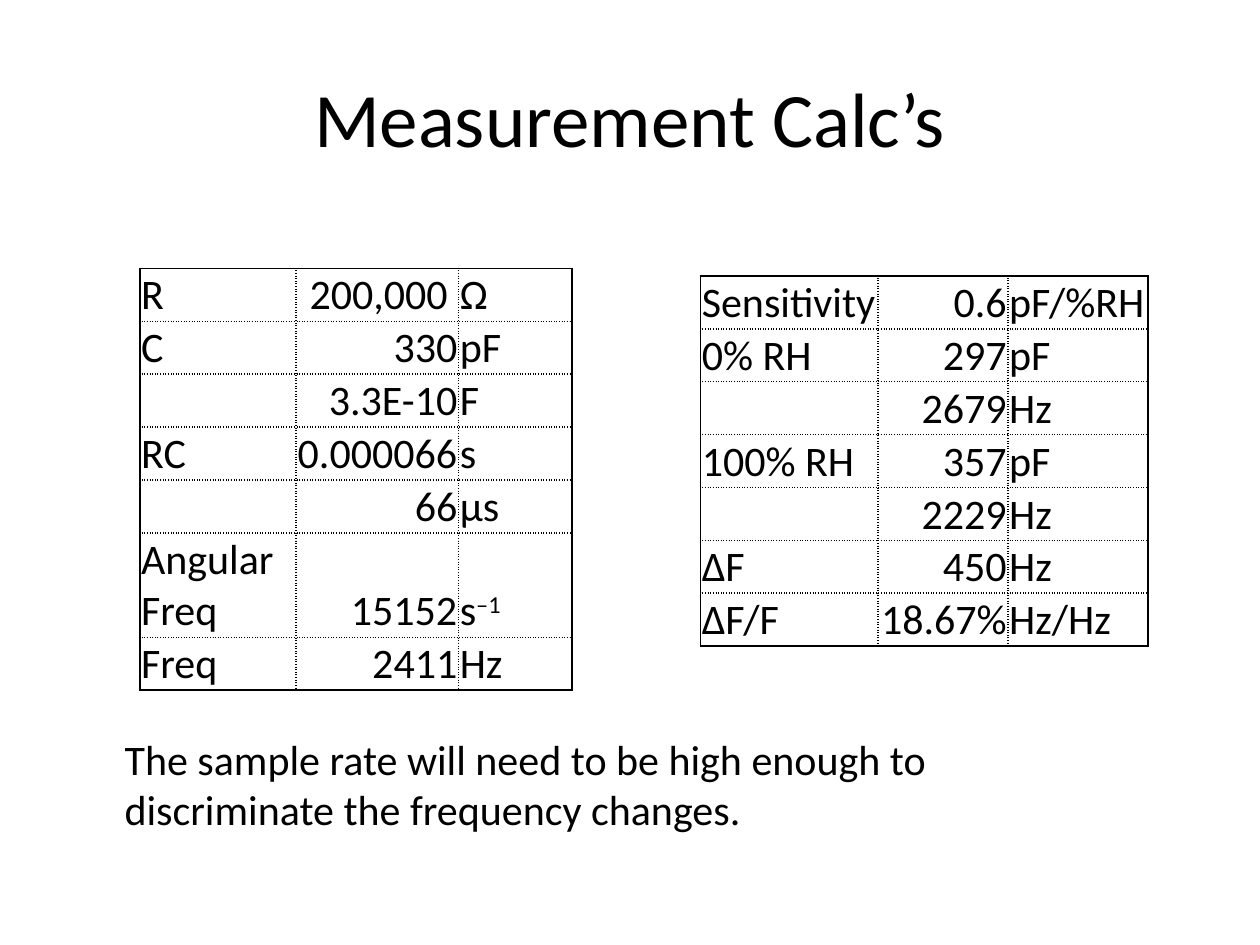
from lxml import etree
from pptx import Presentation
from pptx.dml.color import RGBColor
from pptx.enum.text import MSO_ANCHOR, PP_ALIGN
from pptx.oxml.ns import qn
from pptx.util import Inches, Pt

LEFT, CENTER, RIGHT = PP_ALIGN.LEFT, PP_ALIGN.CENTER, PP_ALIGN.RIGHT
TOP, MIDDLE, BOTTOM = MSO_ANCHOR.TOP, MSO_ANCHOR.MIDDLE, MSO_ANCHOR.BOTTOM
COLORS = {"ink": "000000", "background": "FFFFFF"}
FONT = "Calibri"
BODY_SIZE = 24
ROW_HEIGHT = 0.42
TALL_ROW_HEIGHT = 0.83
CELL_MARGINS = {"margin_left": 0.01, "margin_right": 0.01,
                "margin_top": 0.01, "margin_bottom": 0}

CIRCUIT_ROWS = [
    ("R", " 200,000 ", "Ω"),
    ("C", "330", "pF"),
    ("", "3.3E-10", "F"),
    ("RC", "0.000066", "s"),
    ("", "66", "µs"),
    ("Angular Freq", "15152", "s^–1"),
    ("Freq", "2411", "Hz"),
]
HUMIDITY_ROWS = [
    ("Sensitivity", "0.6", "pF/%RH"),
    ("0% RH", "297", "pF"),
    ("", "2679", "Hz"),
    ("100% RH", "357", "pF"),
    ("", "2229", "Hz"),
    ("∆F", "450", "Hz"),
    ("∆F/F", "18.67%", "Hz/Hz"),
]


def add_span(para, text, size):
    span = para.add_run()
    span.text = text
    for name, value in {"name": FONT, "size": Pt(size)}.items():
        setattr(span.font, name, value)
    span.font.color.rgb = RGBColor.from_string(COLORS["ink"])
    return span


def add_text(page, text, bounds, size, align=LEFT, anchor=TOP):
    box = page.shapes.add_textbox(*map(Inches, bounds))
    frame = box.text_frame
    frame.word_wrap = True
    frame.vertical_anchor = anchor
    para = frame.paragraphs[0]
    para.alignment = align
    add_span(para, text, size)


def set_borders(cell, solid_sides):
    """Draw the named sides solid and the others dotted."""
    properties = cell._tc.get_or_add_tcPr()
    for index, side in enumerate("LRTB"):
        line = etree.Element(qn(f"a:ln{side}"), w=str(Pt(1)))
        fill = etree.SubElement(line, qn("a:solidFill"))
        etree.SubElement(fill, qn("a:srgbClr"), val=COLORS["ink"])
        dash = "solid" if side in solid_sides else "sysDot"
        etree.SubElement(line, qn("a:prstDash"), val=dash)
        properties.insert(index, line)


def fill_cell(cell, text, align):
    """Write the cell text; whatever follows a caret is superscript."""
    cell.fill.background()
    cell.vertical_anchor = BOTTOM
    for name, value in CELL_MARGINS.items():
        setattr(cell, name, Inches(value))
    para = cell.text_frame.paragraphs[0]
    para.alignment = align
    base, _, exponent = text.partition("^")
    if base:
        add_span(para, base, BODY_SIZE)
    if exponent:
        span = add_span(para, exponent, BODY_SIZE)
        span.font._element.set("baseline", "30000")


def add_values_table(page, rows, left, top, widths, tall_row=None):
    heights = [TALL_ROW_HEIGHT if index == tall_row else ROW_HEIGHT
               for index in range(len(rows))]
    bounds = map(Inches, (left, top, sum(widths), sum(heights)))
    table = page.shapes.add_table(len(rows), len(widths), *bounds).table
    table.first_row = table.horz_banding = False
    for column, width in zip(table.columns, widths):
        column.width = Inches(width)
    for row, height in zip(table.rows, heights):
        row.height = Inches(height)

    for row_index, texts in enumerate(rows):
        for column_index, text in enumerate(texts):
            cell = table.cell(row_index, column_index)
            fill_cell(cell, text, RIGHT if column_index == 1 else LEFT)
            outer = {"L": column_index == 0, "R": column_index == len(widths) - 1,
                     "T": row_index == 0, "B": row_index == len(rows) - 1}
            set_borders(cell, [side for side, solid in outer.items() if solid])


def main():
    deck = Presentation()
    deck.slide_width, deck.slide_height = Inches(10), Inches(7.5)
    page = deck.slides.add_slide(deck.slide_layouts[6])
    page.background.fill.solid()
    page.background.fill.fore_color.rgb = RGBColor.from_string(COLORS["background"])

    add_text(page, "Measurement Calc’s", (0.5, 0.3, 9, 1.25), 44, CENTER, MIDDLE)
    add_values_table(page, CIRCUIT_ROWS, 1.11, 2.13, (1.24, 1.29, 0.9), tall_row=5)
    add_values_table(page, HUMIDITY_ROWS, 5.56, 2.19, (1.41, 1.03, 1.11))
    add_text(page, "The sample rate will need to be high enough to "
             "discriminate the frequency changes.", (0.89, 5.77, 8.21, 0.91), BODY_SIZE)
    deck.save("out.pptx")


if __name__ == "__main__":
    main()
